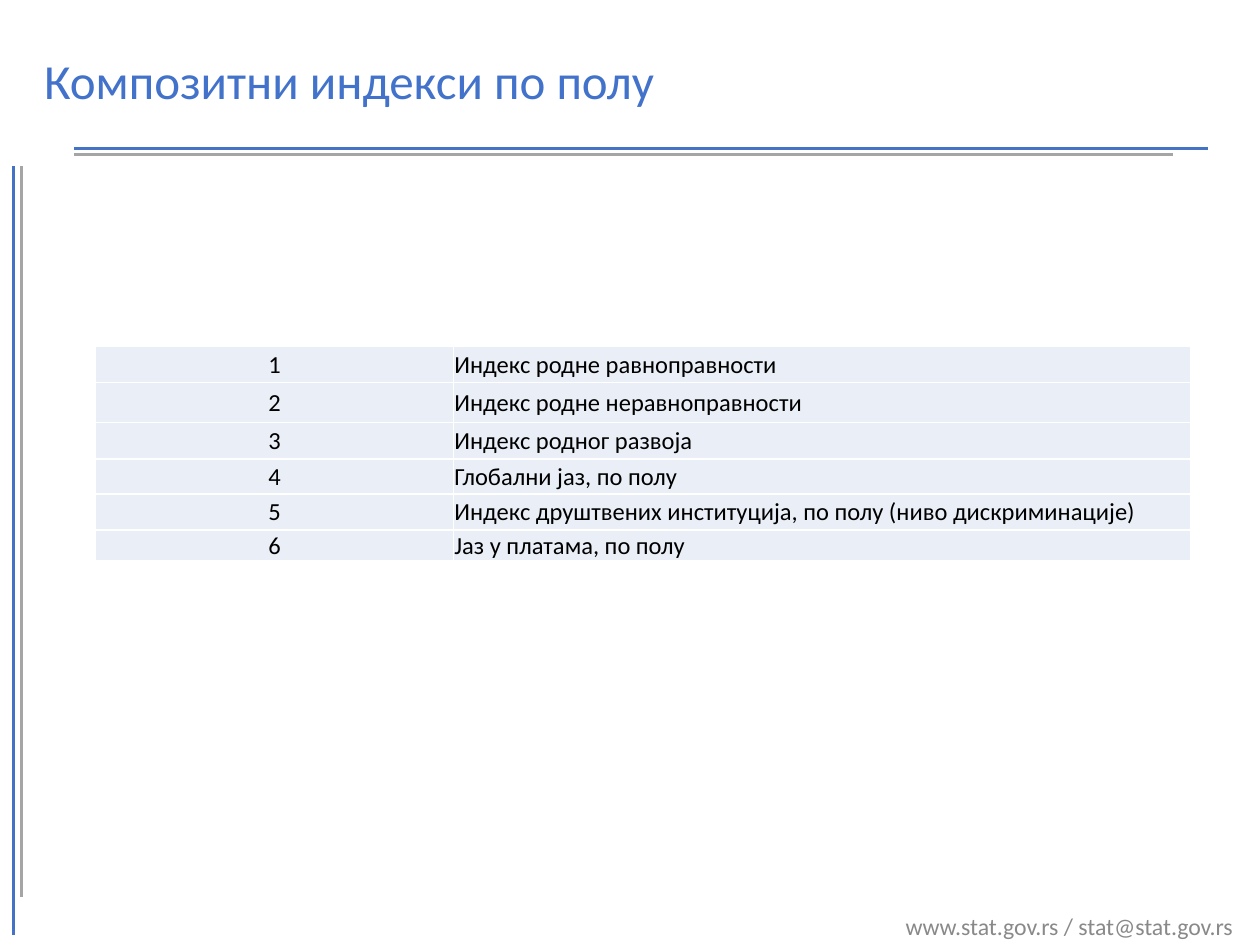
from dataclasses import dataclass

from lxml.etree import SubElement
from pptx import Presentation
from pptx.dml.color import RGBColor
from pptx.enum.shapes import MSO_CONNECTOR
from pptx.enum.text import MSO_ANCHOR, PP_ALIGN
from pptx.oxml.ns import qn
from pptx.slide import Slide
from pptx.table import _Cell
from pptx.text.text import _Paragraph
from pptx.util import Cm, Pt


@dataclass(frozen=True)
class Theme:
    font: str = "Calibri"
    title: str = "4272CA"
    blue: str = "4472C4"
    gray: str = "A5A5A5"
    footer: str = "898989"
    text: str = "000000"
    cell: str = "EAEFF7"
    border: str = "FFFFFF"
    title_size: float = 28
    table_size: float = 14
    footer_size: float = 13.6
    rule_width: float = 1.75
    border_width: float = 1


@dataclass(frozen=True)
class Rule:
    x1: float
    y1: float
    x2: float
    y2: float
    color: str


@dataclass(frozen=True)
class Label:
    text: str
    left: float
    top: float
    width: float
    height: float
    size: float
    color: str
    align: PP_ALIGN = PP_ALIGN.LEFT
    spacing: float = 1.0


@dataclass(frozen=True)
class IndexRow:
    name: str
    height: float


THEME = Theme()

RULES = [
    Rule(0.28, 3.35, 0.28, 18.85, THEME.blue),
    Rule(0.43, 3.35, 0.43, 18.08, THEME.gray),
    Rule(1.5, 3, 24.36, 3, THEME.blue),
    Rule(1.5, 3.12, 23.65, 3.12, THEME.gray),
]

LABELS = [
    Label("www.stat.gov.rs / stat@stat.gov.rs", 16.51, 18.29, 8.59, 0.76,
          THEME.footer_size, THEME.footer, PP_ALIGN.RIGHT),
    Label("Композитни индекси по полу", 0.64, 0.41, 24.13, 2.54,
          THEME.title_size, THEME.title, spacing=0.9),
]

INDEX_ROWS = [
    IndexRow("Индекс родне равноправности", 0.73),
    IndexRow("Индекс родне неравноправности", 0.81),
    IndexRow("Индекс родног развоја", 0.73),
    IndexRow("Глобални јаз, по полу", 0.71),
    IndexRow("Индекс друштвених институција, по полу (ниво дискриминације)", 0.72),
    IndexRow("Јаз у платама, по полу", 0.61),
]
COLUMN_WIDTHS = (7.21, 14.86)


def style(p: _Paragraph, size: float, color: str, align: PP_ALIGN) -> None:
    p.alignment = align
    p.font.name = THEME.font
    p.font.size = Pt(size)
    p.font.color.rgb = RGBColor.from_string(color)


def draw_rule(s: Slide, rule: Rule) -> None:
    line = s.shapes.add_connector(MSO_CONNECTOR.STRAIGHT, Cm(rule.x1), Cm(rule.y1),
                                  Cm(rule.x2), Cm(rule.y2))
    line.line.color.rgb = RGBColor.from_string(rule.color)
    line.line.width = Pt(THEME.rule_width)
    SubElement(line._element.spPr, qn("a:effectLst"))


def draw_label(s: Slide, label: Label) -> None:
    sp = s.shapes.add_textbox(Cm(label.left), Cm(label.top), Cm(label.width), Cm(label.height))
    tf = sp.text_frame
    tf.word_wrap = True
    tf.vertical_anchor = MSO_ANCHOR.MIDDLE
    p = tf.paragraphs[0]
    p.text = label.text
    p.line_spacing = label.spacing
    style(p, label.size, label.color, label.align)


def add_borders(cell: _Cell) -> None:
    """Outline a cell; call before filling it, as the fill follows the lines in XML."""
    tc_pr = cell._tc.get_or_add_tcPr()
    for side in ("lnL", "lnR", "lnT", "lnB"):
        ln = SubElement(tc_pr, qn(f"a:{side}"), w=str(Pt(THEME.border_width)))
        fill = SubElement(ln, qn("a:solidFill"))
        SubElement(fill, qn("a:srgbClr"), val=THEME.border)


def fill_cell(cell: _Cell, text: str, align: PP_ALIGN) -> None:
    add_borders(cell)
    cell.fill.solid()
    cell.fill.fore_color.rgb = RGBColor.from_string(THEME.cell)
    cell.vertical_anchor = MSO_ANCHOR.MIDDLE
    cell.margin_left = cell.margin_right = cell.margin_top = Cm(0.02)
    cell.margin_bottom = 0
    p = cell.text_frame.paragraphs[0]
    p.text = text
    style(p, THEME.table_size, THEME.text, align)


def draw_index_table(s: Slide, left: float, top: float) -> None:
    height = sum(row.height for row in INDEX_ROWS)
    table = s.shapes.add_table(len(INDEX_ROWS), len(COLUMN_WIDTHS), Cm(left), Cm(top),
                               Cm(sum(COLUMN_WIDTHS)), Cm(height)).table
    table.first_row = False
    table.horz_banding = False
    for column, width in zip(table.columns, COLUMN_WIDTHS):
        column.width = Cm(width)
    for i, row in enumerate(INDEX_ROWS):
        table.rows[i].height = Cm(row.height)
        fill_cell(table.cell(i, 0), str(i + 1), PP_ALIGN.CENTER)
        fill_cell(table.cell(i, 1), row.name, PP_ALIGN.LEFT)


def main() -> None:
    prs = Presentation()
    prs.slide_width, prs.slide_height = Cm(25.4), Cm(19.05)
    s = prs.slides.add_slide(prs.slide_layouts[6])
    for rule in RULES:
        draw_rule(s, rule)
    for label in LABELS:
        draw_label(s, label)
    draw_index_table(s, 1.93, 6.98)
    prs.save("out.pptx")


if __name__ == "__main__":
    main()
